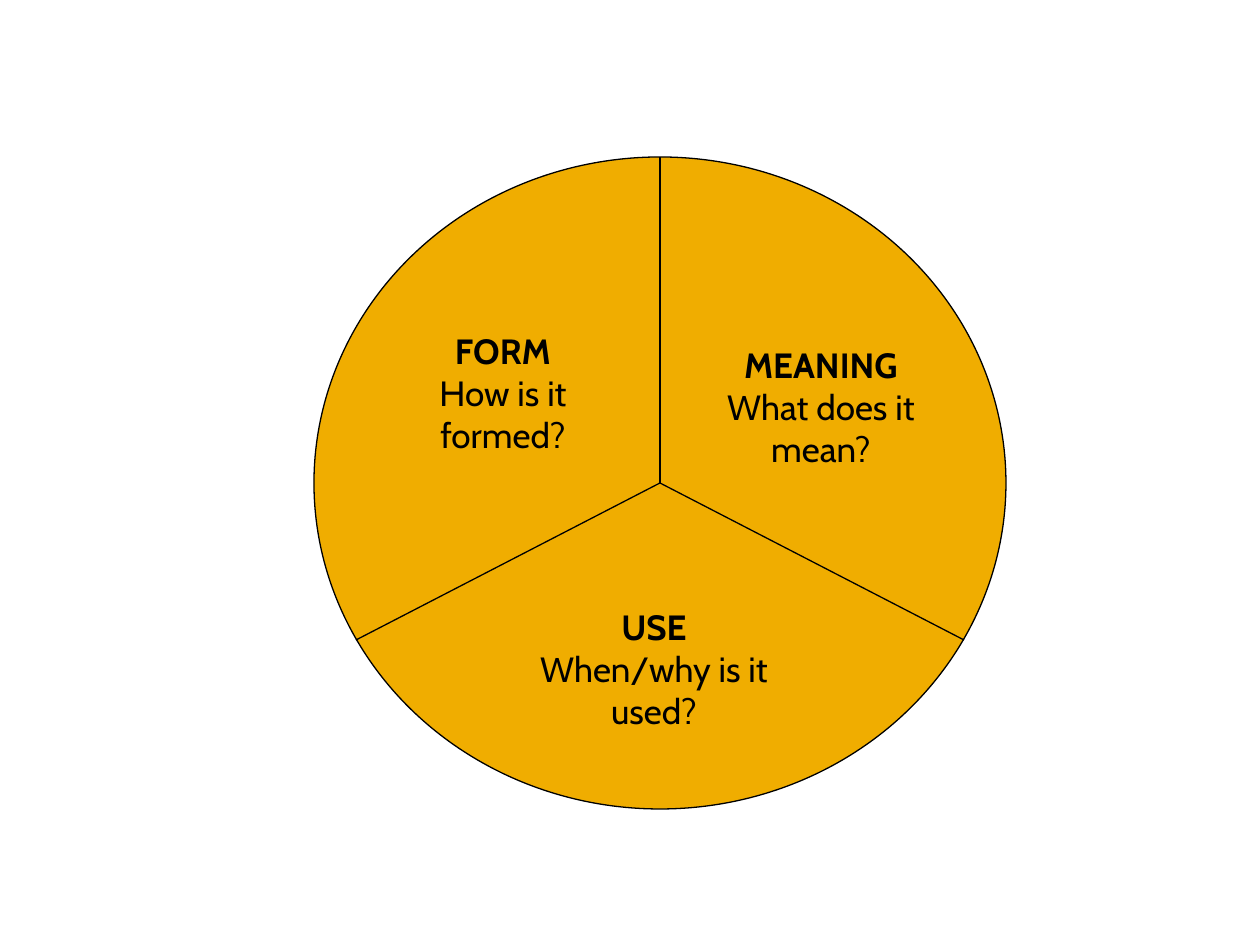
from lxml import etree
from pptx import Presentation
from pptx.dml.color import RGBColor
from pptx.enum.shapes import MSO_CONNECTOR, MSO_SHAPE
from pptx.enum.text import MSO_ANCHOR, PP_ALIGN
from pptx.oxml.ns import qn
from pptx.util import Pt

ELLIPSE = MSO_SHAPE.OVAL
STRAIGHT = MSO_CONNECTOR.STRAIGHT
CENTER = PP_ALIGN.CENTER
TOP = MSO_ANCHOR.TOP

PX_PER_INCH = 126
COLORS = {"gold": "F0AD00", "black": "000000"}


def px(length):
    return round(length * 914400 / PX_PER_INCH)


def color(name):
    return RGBColor.from_string(COLORS[name])


def add_text(paragraph, text, *, font="Cabin", size=20, bold=False, fill="black"):
    paragraph.alignment = CENTER
    run = paragraph.add_run()
    run.text = text
    run.font.name = font
    run.font.size = Pt(size)
    run.font.bold = bold
    run.font.color.rgb = color(fill)


class Diagram:
    """Draws on one slide with a shared outline style."""

    def __init__(self, slide, line_color="black", line_width=0.75):
        self.slide = slide
        self.line_color = line_color
        self.line_width = line_width

    def outline(self, shape):
        shape.line.color.rgb = color(self.line_color)
        shape.line.width = Pt(self.line_width)

    def ellipse(self, center_x, center_y, radius_x, radius_y, fill):
        shape = self.slide.shapes.add_shape(
            ELLIPSE, px(center_x - radius_x), px(center_y - radius_y),
            px(2 * radius_x), px(2 * radius_y))
        shape.shadow.inherit = False
        shape.fill.solid()
        shape.fill.fore_color.rgb = color(fill)
        self.outline(shape)

    def line(self, x1, y1, x2, y2):
        connector = self.slide.shapes.add_connector(
            STRAIGHT, px(x1), px(y1), px(x2), px(y2))
        self.outline(connector)
        etree.SubElement(connector._element.spPr, qn("a:effectLst"))

    def label(self, left, top, width, height, heading, question):
        box = self.slide.shapes.add_textbox(px(left), px(top), px(width), px(height))
        frame = box.text_frame
        frame.word_wrap = True
        frame.vertical_anchor = TOP
        add_text(frame.paragraphs[0], heading, bold=True)
        add_text(frame.add_paragraph(), question)


def main():
    presentation = Presentation()
    presentation.slide_width = px(1260)
    presentation.slide_height = px(945)
    diagram = Diagram(presentation.slides.add_slide(presentation.slide_layouts[6]))

    center_x, center_y = 660, 483
    radius_x, radius_y = 346, 326
    diagram.ellipse(center_x, center_y, radius_x, radius_y, "gold")
    for offset_x, offset_y in ((0, -radius_y), (304, 157), (-304, 157)):
        diagram.line(center_x, center_y, center_x + offset_x, center_y + offset_y)

    label_height = 97
    for left, top, width, heading, question in (
        (364, 323, 278, "FORM", "How is it formed?"),
        (670, 337, 302, "MEANING", "What does it mean?"),
        (490, 599, 328, "USE", "When/why is it used?"),
    ):
        diagram.label(left, top, width, label_height, heading, question)

    presentation.save("out.pptx")


if __name__ == "__main__":
    main()
